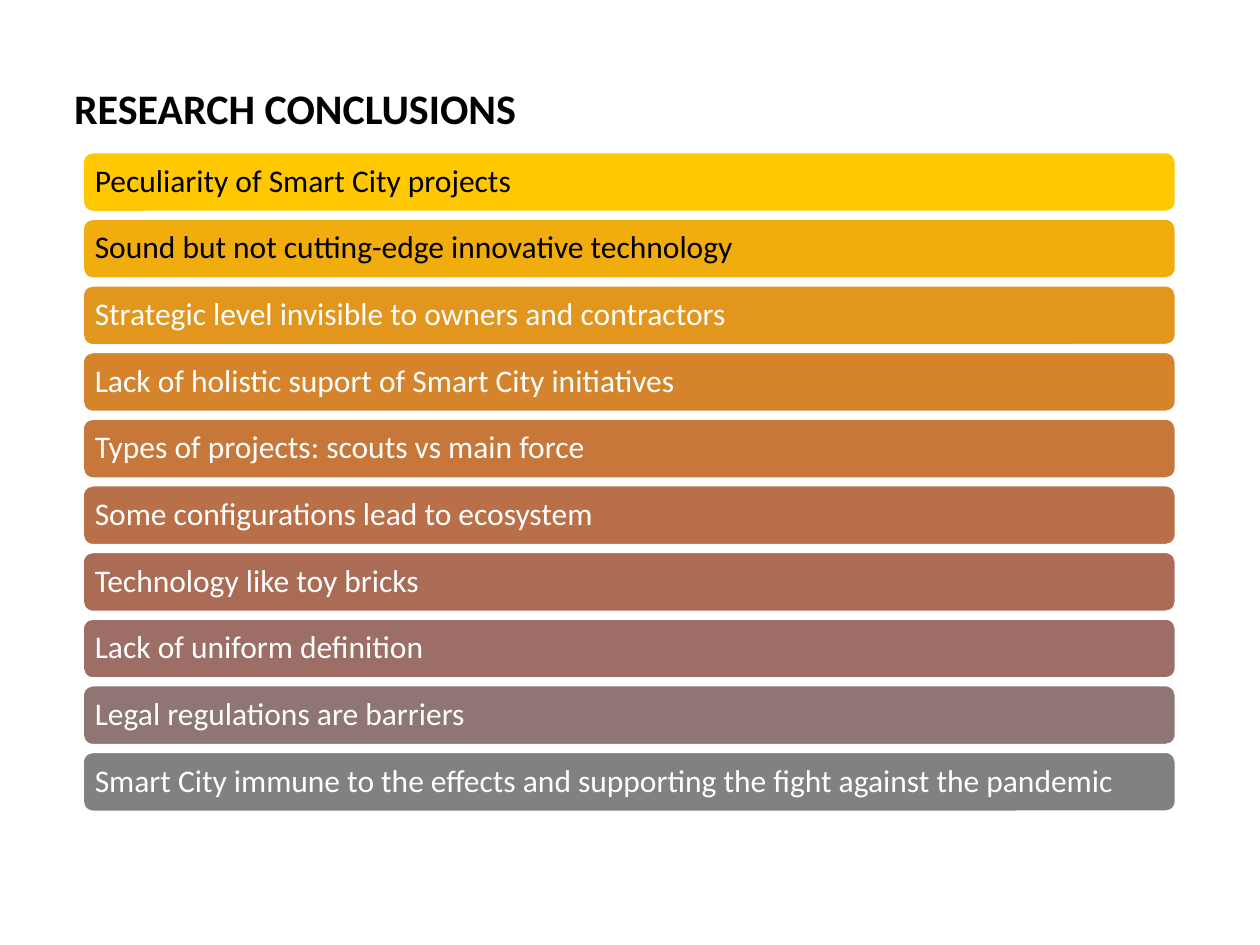
import pptx
import pptx.util
import pptx.dml.color
import pptx.enum.shapes
import pptx.enum.text

Inches, Pt = pptx.util.Inches, pptx.util.Pt
RGBColor = pptx.dml.color.RGBColor
PP_ALIGN = pptx.enum.text.PP_ALIGN
MSO_ANCHOR = pptx.enum.text.MSO_ANCHOR

BLACK = RGBColor(0x00, 0x00, 0x00)
WHITE = RGBColor(0xFF, 0xFF, 0xFF)

TITLE = "RESEARCH CONCLUSIONS"
CONCLUSIONS = [
    ("Peculiarity of Smart City projects", RGBColor(0xFF, 0xC8, 0x00), BLACK),
    ("Sound but not cutting-edge innovative technology", RGBColor(0xF1, 0xAC, 0x0E), BLACK),
    ("Strategic level invisible to owners and contractors", RGBColor(0xE3, 0x96, 0x1D), WHITE),
    ("Lack of holistic suport of Smart City initiatives", RGBColor(0xD5, 0x84, 0x2B), WHITE),
    ("Types of projects: scouts vs main force", RGBColor(0xC7, 0x77, 0x3A), WHITE),
    ("Some configurations lead to ecosystem", RGBColor(0xB9, 0x6F, 0x48), WHITE),
    ("Technology like toy bricks", RGBColor(0xAB, 0x6C, 0x56), WHITE),
    ("Lack of uniform definition", RGBColor(0x9D, 0x6E, 0x65), WHITE),
    ("Legal regulations are barriers", RGBColor(0x8F, 0x75, 0x73), WHITE),
    ("Smart City immune to the effects and supporting the fight against the pandemic",
     RGBColor(0x81, 0x81, 0x81), WHITE),
]

BAR_LEFT, BAR_WIDTH, BAR_HEIGHT = 0.66, 8.67, 0.47
FIRST_TOP, LAST_TOP = 1.21, 5.97
PITCH = (LAST_TOP - FIRST_TOP) / (len(CONCLUSIONS) - 1)


def write(shape, text, size, color, spacing, anchor, bold=False):
    tf = shape.text_frame
    tf.word_wrap = True
    tf.vertical_anchor = anchor
    tf.text = text
    p = tf.paragraphs[0]
    p.alignment = PP_ALIGN.LEFT
    p.line_spacing = spacing
    font = p.runs[0].font
    font.name, font.size, font.bold = "Calibri", Pt(size), bold
    font.color.rgb = color


def add_bar(s, row, text, fill, color):
    bar = s.shapes.add_shape(
        pptx.enum.shapes.MSO_SHAPE.ROUNDED_RECTANGLE,
        Inches(BAR_LEFT), Inches(FIRST_TOP + row * PITCH),
        Inches(BAR_WIDTH), Inches(BAR_HEIGHT))
    bar.shadow.inherit = False
    bar.fill.solid()
    bar.fill.fore_color.rgb = fill
    bar.line.color.rgb = WHITE
    bar.line.width = Pt(1)
    tf = bar.text_frame
    tf.margin_left = tf.margin_right = Inches(0.07)
    tf.margin_top = tf.margin_bottom = Inches(0.07)
    write(bar, text, 18, color, 0.9, MSO_ANCHOR.MIDDLE)


def main():
    prs = pptx.Presentation()
    prs.slide_width, prs.slide_height = Inches(10), Inches(7.5)
    s = prs.slides.add_slide(prs.slide_layouts[6])

    title = s.shapes.add_textbox(Inches(0.49), Inches(0.55), Inches(9.24), Inches(0.51))
    write(title, TITLE, 24, BLACK, 1.13, MSO_ANCHOR.TOP, bold=True)

    for row, (text, fill, color) in enumerate(CONCLUSIONS):
        add_bar(s, row, text, fill, color)

    prs.save("out.pptx")


if __name__ == "__main__":
    main()
